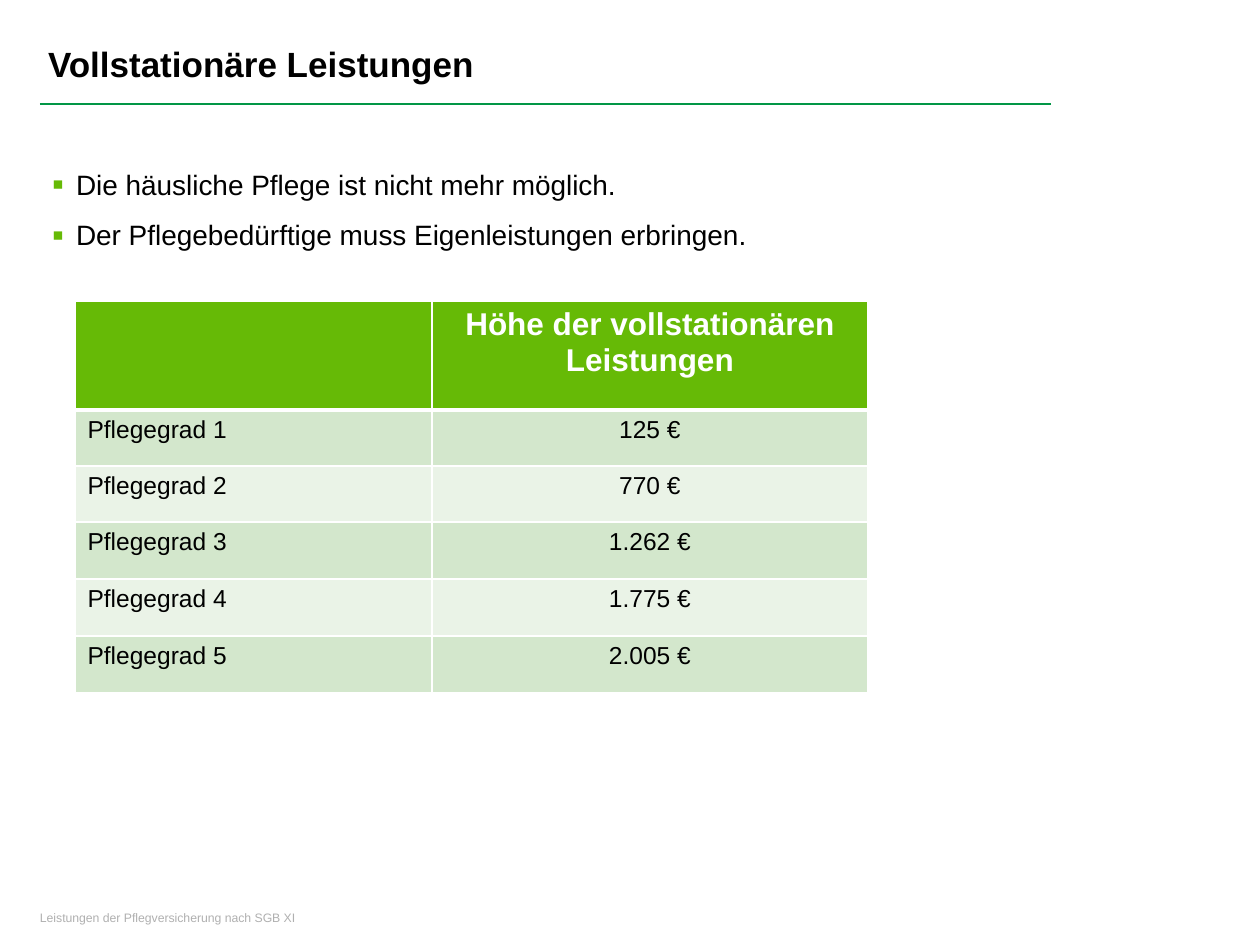
from lxml import etree
from pptx import Presentation
from pptx import util as u
from pptx.dml.color import RGBColor
from pptx.enum import shapes, text
from pptx.oxml.ns import qn

PX = u.Inches(1) / 126
BLACK = RGBColor(0x00, 0x00, 0x00)
WHITE = RGBColor(0xFF, 0xFF, 0xFF)
GRAY = RGBColor(0xB0, 0xB0, 0xB0)
RULE = RGBColor(0x02, 0x96, 0x46)
GREEN = RGBColor(0x66, 0xBA, 0x06)
BANDS = RGBColor(0xD3, 0xE7, 0xCC), RGBColor(0xEA, 0xF3, 0xE7)

GRADES = [
    ("Pflegegrad 1", "125 €"),
    ("Pflegegrad 2", "770 €"),
    ("Pflegegrad 3", "1.262 €"),
    ("Pflegegrad 4", "1.775 €"),
    ("Pflegegrad 5", "2.005 €"),
]


def emu(px):
    return u.Emu(round(px * PX))


def sub(node, tag, **attrs):
    return etree.SubElement(node, qn(tag), attrs)


class Page:
    """Holds the slide and its text style."""

    face = "Arial"

    def __init__(self, deck):
        self.slide = deck.slides.add_slide(deck.slide_layouts[1])
        self.shapes = self.slide.shapes

    def style(self, para, size, color, bold=False, align=text.PP_ALIGN.LEFT):
        para.alignment = align
        for run in para.runs:
            font = run.font
            font.name, font.size, font.bold = self.face, u.Pt(size), bold
            font.color.rgb = color

    def place(self, shape, box, anchor, insets=(10, 5, 10, 5)):
        shape.left, shape.top, shape.width, shape.height = map(emu, box)
        frame = shape.text_frame
        frame.word_wrap = True
        frame.auto_size = text.MSO_AUTO_SIZE.NONE
        frame.vertical_anchor = anchor
        (frame.margin_left, frame.margin_top,
         frame.margin_right, frame.margin_bottom) = map(emu, insets)
        return frame

    def title(self, words, box):
        frame = self.place(self.shapes.title, box, text.MSO_ANCHOR.MIDDLE)
        frame.text = words
        self.style(frame.paragraphs[0], 20, BLACK, bold=True)

    def bullets(self, lines, box):
        body = self.slide.placeholders[1]
        frame = self.place(body, box, text.MSO_ANCHOR.TOP)
        frame.text = "\n".join(lines)
        for i, para in enumerate(frame.paragraphs):
            props = para._p.get_or_add_pPr()
            props.set("marL", str(emu(24)))
            props.set("indent", str(emu(-24)))
            sub(sub(props, "a:buClr"), "a:srgbClr", val=str(GREEN))
            sub(props, "a:buSzPct", val="120000")
            sub(props, "a:buFont", typeface=self.face)
            sub(props, "a:buChar", char="▪")
            para.line_spacing = u.Pt(21)
            para.space_before = u.Pt(8 if i else 0)
            self.style(para, 16, BLACK)

    def note(self, words, box):
        shape = self.shapes.add_textbox(0, 0, 0, 0)
        frame = self.place(shape, box, text.MSO_ANCHOR.MIDDLE, (0, 0, 10, 5))
        frame.text = words
        self.style(frame.paragraphs[0], 7, GRAY)

    def rule(self, left, right, y):
        line = self.shapes.add_connector(
            shapes.MSO_CONNECTOR.STRAIGHT, emu(left), emu(y), emu(right), emu(y))
        line.line.color.rgb = RULE
        line.line.width = u.Pt(1.25)
        sub(line._element.spPr, "a:effectLst")

    def edges(self, cell, top, bottom):
        """Draws white cell borders; top and bottom are widths in points."""
        props = cell._tc.get_or_add_tcPr()
        for side, width in zip("LRTB", (1, 1, top, bottom)):
            line = sub(props, "a:ln" + side, w=str(u.Pt(width)))
            sub(sub(line, "a:solidFill"), "a:srgbClr", val=str(WHITE))

    def table(self, rows, left, top, widths, heights):
        grid = self.shapes.add_table(
            len(rows), len(widths), emu(left), emu(top),
            emu(sum(widths)), emu(sum(heights))).table
        for col, width in zip(grid.columns, widths):
            col.width = emu(width)
        for r, (row, height) in enumerate(zip(rows, heights)):
            grid.rows[r].height = emu(height)
            for c, words in enumerate(row):
                cell = grid.cell(r, c)
                self.edges(cell, 3 if r == 1 else 1, 1 if r else 3)
                cell.fill.solid()
                cell.fill.fore_color.rgb = BANDS[(r - 1) % 2] if r else GREEN
                cell.text = words
                align = text.PP_ALIGN.CENTER if c else text.PP_ALIGN.LEFT
                size, color = (14, BLACK) if r else (18, WHITE)
                self.style(cell.text_frame.paragraphs[0], size, color,
                           bold=r == 0, align=align)


def main():
    deck = Presentation()
    deck.slide_width, deck.slide_height = u.Inches(10), u.Inches(7.5)
    page = Page(deck)
    page.note("Leistungen der Pflegversicherung nach SGB XI", (40, 908, 665, 24))
    page.rule(40, 1051, 104)
    page.title("Vollstationäre Leistungen", (38, 34, 959, 59))
    page.bullets(["Die häusliche Pflege ist nicht mehr möglich.",
                  "Der Pflegebedürftige muss Eigenleistungen erbringen."],
                 (42, 159, 1037, 126))
    head = ("", "Höhe der vollstationären Leistungen")
    page.table([head] + GRADES, 75, 301, (357, 436), (109, 56, 56, 57, 57, 57))
    deck.save("out.pptx")


if __name__ == "__main__":
    main()
